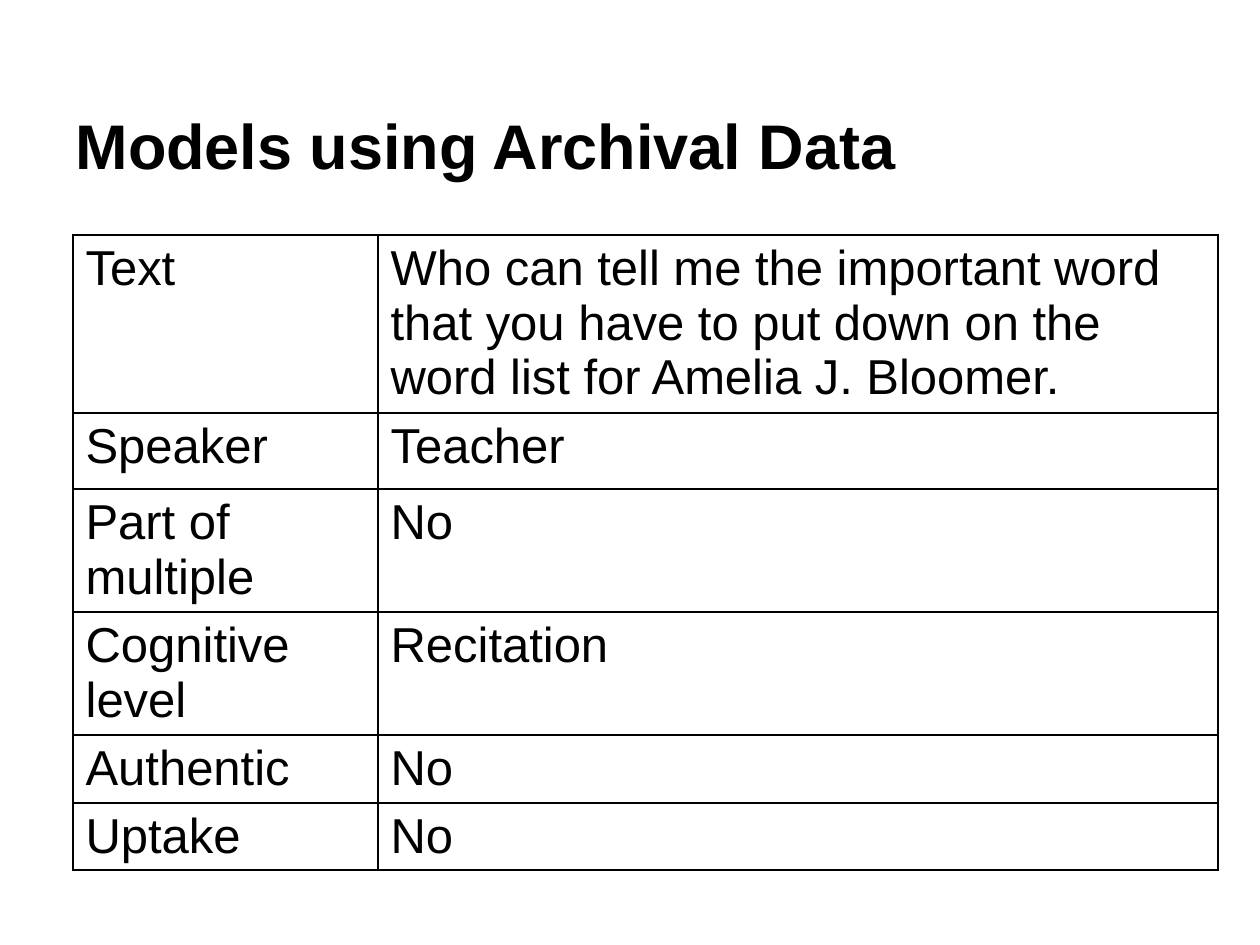
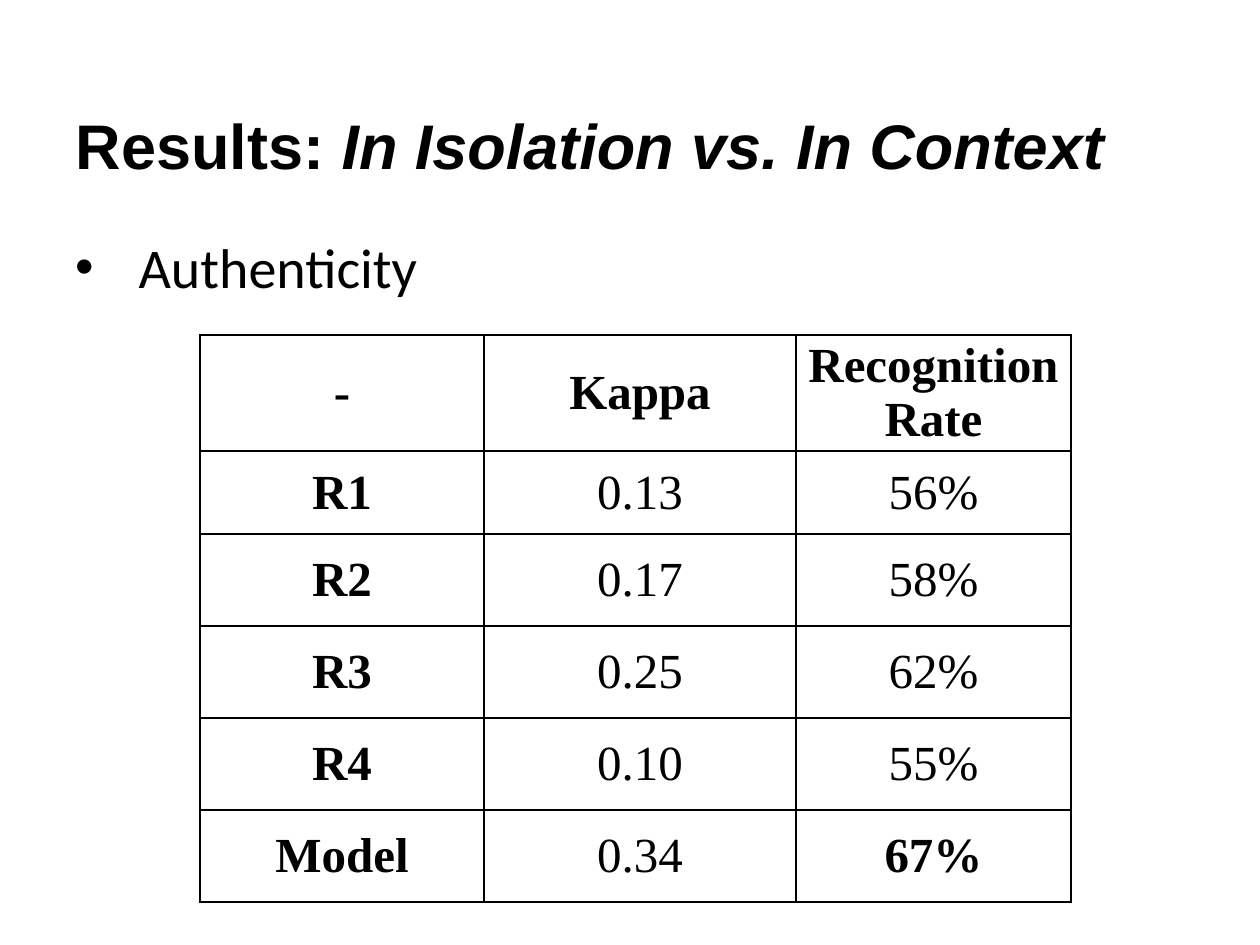
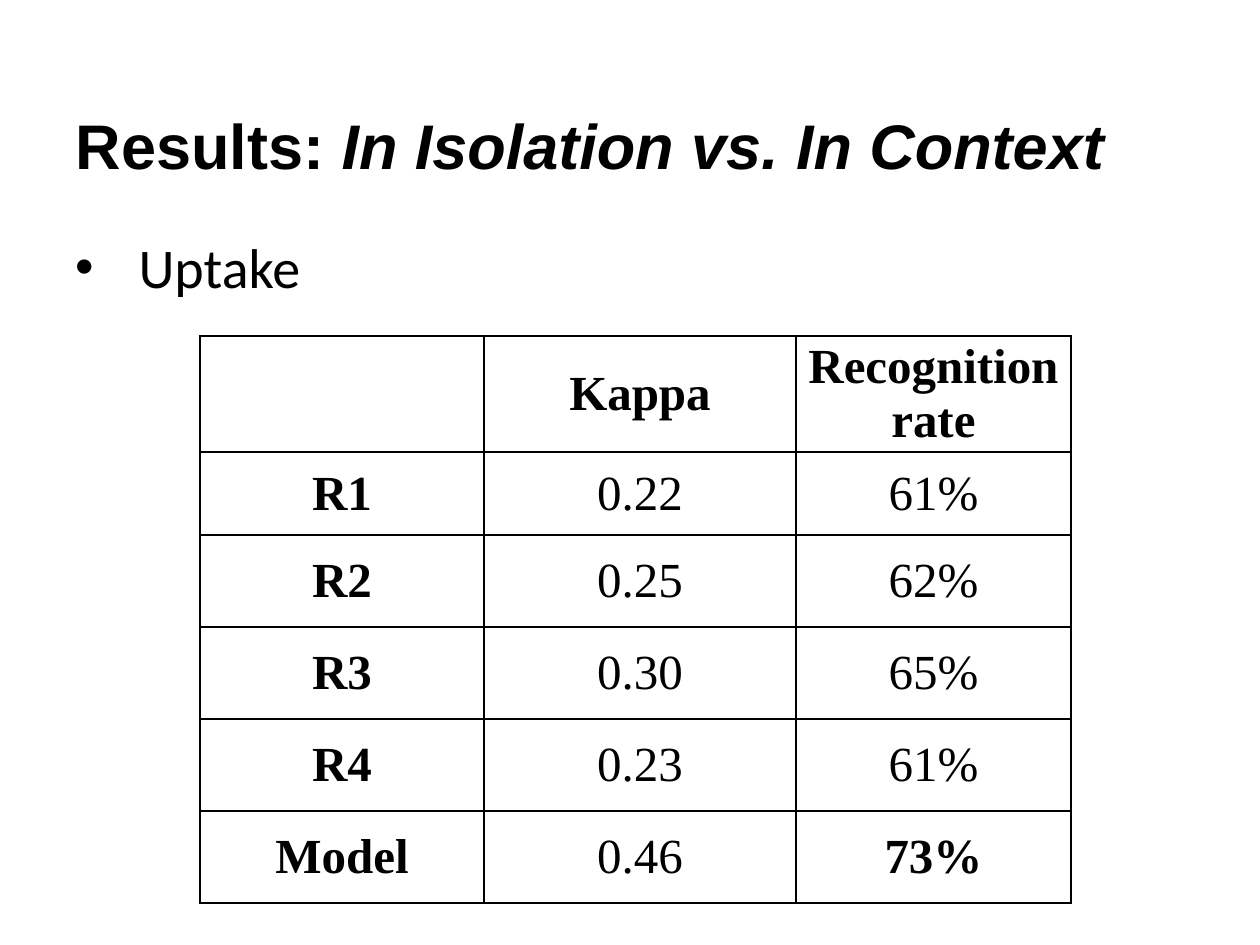
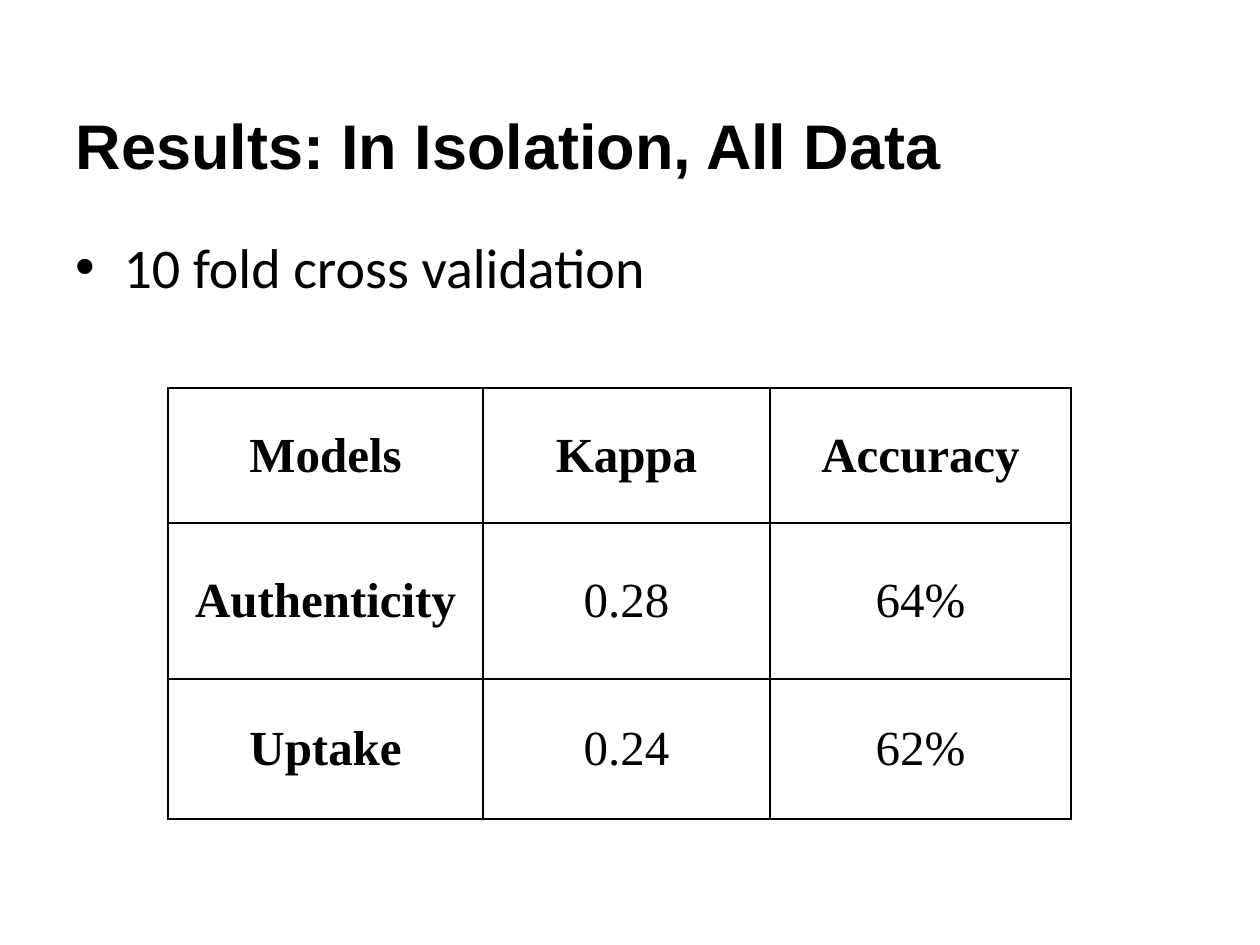
from lxml import etree
from pptx import Presentation, util as u
from pptx.dml.color import RGBColor
from pptx.enum import dml, text
from pptx.oxml import ns

BLACK = RGBColor(0x00, 0x00, 0x00)
WHITE = RGBColor(0xFF, 0xFF, 0xFF)
PX = u.Inches(1) / 126
TITLE_ONLY, TITLE_AND_BODY = 5, 1


def px(length):
    return round(length * PX)


class Slides:
    title_font, list_font, figure_font = "Arial", "Calibri", "Times New Roman"
    title_size, list_size, table_size = u.Pt(36), u.Pt(32), u.Pt(28)

    def __init__(self):
        self.deck = Presentation()
        self.deck.slide_width, self.deck.slide_height = px(1260), px(945)
        self.page = None

    def add_page(self, layout):
        self.page = self.deck.slides.add_slide(self.deck.slide_layouts[layout])
        self.page.background.fill.solid()
        self.page.background.fill.fore_color.rgb = WHITE

    def style(self, para, name, size, bold=False):
        para.font.name, para.font.size, para.font.bold = name, size, bold
        para.font.color.rgb = BLACK

    def place(self, box, left, top, width, height):
        box.left, box.top, box.width, box.height = map(px, (left, top, width, height))
        frame = box.text_frame
        frame.word_wrap = True
        frame.auto_size = text.MSO_AUTO_SIZE.NONE
        frame.margin_left = frame.margin_right = u.Inches(0.1)
        frame.margin_top = frame.margin_bottom = u.Inches(0.1)
        return frame

    def title(self, plain, italic=""):
        frame = self.place(self.page.shapes.title, 63, 38, 1134, 157)
        frame.vertical_anchor = text.MSO_ANCHOR.BOTTOM
        para = frame.paragraphs[0]
        para.alignment = text.PP_ALIGN.LEFT
        self.style(para, self.title_font, self.title_size, True)
        para.add_run().text = plain
        if italic:
            span = para.add_run()
            span.text = italic
            span.font.italic = True

    def bullet(self, words, indent=63, bullet_size=94, before=5.6):
        frame = self.place(self.page.placeholders[1], 63, 220, 1134, 684)
        frame.text = words
        para = frame.paragraphs[0]
        props = para._p.get_or_add_pPr()
        props.set("marL", str(px(indent)))
        props.set("indent", str(-px(indent)))
        etree.SubElement(props, ns.qn("a:buSzPct"), val=str(bullet_size * 1000))
        etree.SubElement(props, ns.qn("a:buFont"), typeface="Arial")
        etree.SubElement(props, ns.qn("a:buChar"), char="•")
        para.space_before = u.Pt(before)
        self.style(para, self.list_font, self.list_size)

    def borders(self, cell):
        props = cell._tc.get_or_add_tcPr()
        for position, side in enumerate(("lnL", "lnR", "lnT", "lnB")):
            line = etree.Element(ns.qn(f"a:{side}"), w=str(u.Pt(1)))
            fill = etree.SubElement(line, ns.qn("a:solidFill"))
            etree.SubElement(fill, ns.qn("a:srgbClr"), val=str(BLACK))
            props.insert(position, line)

    def table(self, left, top, widths, heights, rows):
        frame = self.page.shapes.add_table(
            len(rows), len(widths), px(left), px(top), px(sum(widths)), px(sum(heights)))
        table = frame.table
        table.first_row = table.horz_banding = False
        for column, width in zip(table.columns, widths):
            column.width = px(width)
        for row, height, words in zip(table.rows, heights, rows):
            row.height = px(height)
            for cell, word in zip(row.cells, words):
                cell.text = word
                cell.fill.background()
                self.borders(cell)
        return table

    def fact_table(self, rows):
        table = self.table(73, 235, (305, 840), (178, 76, 123, 123, 68, 66), rows)
        for cell in table.iter_cells():
            self.style(cell.text_frame.paragraphs[0], self.title_font, self.table_size)

    def figure_table(self, left, top, widths, heights, rows, bold_cells=(), after=0):
        table = self.table(left, top, widths, heights, rows)
        for index, cell in enumerate(table.iter_cells()):
            row, column = divmod(index, len(widths))
            cell.vertical_anchor = text.MSO_ANCHOR.MIDDLE
            cell.margin_left = cell.margin_right = px(9)
            cell.margin_top = cell.margin_bottom = 0
            para = cell.text_frame.paragraphs[0]
            para.alignment = text.PP_ALIGN.CENTER
            para.space_after = u.Pt(after)
            bold = row == 0 or column == 0 or (row, column) in bold_cells
            self.style(para, self.figure_font, self.table_size, bold)

    def comparison(self, topic, top, rows):
        self.add_page(TITLE_AND_BODY)
        self.title("Results: ", "In Isolation vs. In Context")
        self.bullet(topic)
        self.figure_table(200, top, (284, 312, 275), (116, 83, 92, 92, 92, 92),
                          rows, bold_cells={(5, 2)})


def main():
    slides = Slides()

    slides.add_page(TITLE_ONLY)
    slides.title("Models using Archival Data")
    slides.fact_table([
        ("Text", "Who can tell me the important word that you have to put down "
                 "on the word list for Amelia J. Bloomer."),
        ("Speaker", "Teacher"),
        ("Part of multiple", "No"),
        ("Cognitive level", "Recitation"),
        ("Authentic", "No"),
        ("Uptake", "No"),
    ])

    slides.comparison("Authenticity", 335, [
        ("-", "Kappa", "Recognition Rate"),
        ("R1", "0.13", "56%"),
        ("R2", "0.17", "58%"),
        ("R3", "0.25", "62%"),
        ("R4", "0.10", "55%"),
        ("Model", "0.34", "67%"),
    ])

    slides.comparison("Uptake", 336, [
        ("", "Kappa", "Recognition rate"),
        ("R1", "0.22", "61%"),
        ("R2", "0.25", "62%"),
        ("R3", "0.30", "65%"),
        ("R4", "0.23", "61%"),
        ("Model", "0.46", "73%"),
    ])

    slides.add_page(TITLE_AND_BODY)
    slides.title("Results: In Isolation, All Data")
    slides.bullet("10 fold cross validation", indent=48, bullet_size=100, before=6.4)
    slides.figure_table(168, 388, (315, 287, 301), (135, 156, 140), [
        ("Models", "Kappa", "Accuracy"),
        ("Authenticity", "0.28", "64%"),
        ("Uptake", "0.24", "62%"),
    ], after=6)

    slides.deck.save("out.pptx")


if __name__ == "__main__":
    main()
